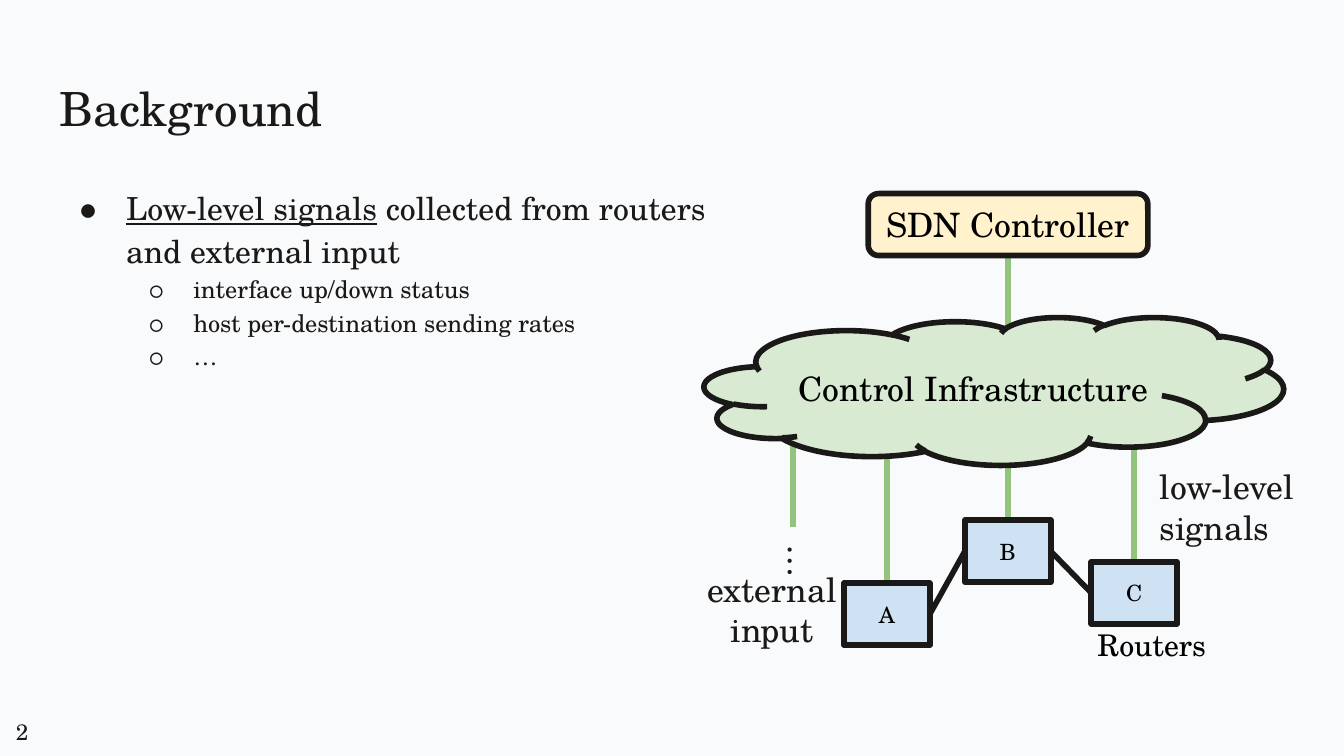
from dataclasses import dataclass

from lxml import etree
from pptx import Presentation
from pptx import util as u
from pptx.dml.color import RGBColor
from pptx.enum import shapes, text
from pptx.oxml import ns

Pt = u.Pt
SHAPE = shapes.MSO_SHAPE
LEFT, CENTER = text.PP_ALIGN.LEFT, text.PP_ALIGN.CENTER
TOP, MIDDLE = text.MSO_ANCHOR.TOP, text.MSO_ANCHOR.MIDDLE


@dataclass(frozen=True)
class Theme:
    font: str = "TeX Gyre Schola"
    page: str = "F9FAFB"
    ink: str = "1B1918"
    black: str = "000000"
    link: str = "93C47D"
    controller: str = "FFF2CC"
    cloud: str = "D9EAD3"
    router: str = "CFE2F3"
    title_size: float = 25.2
    label_size: float = 18
    caption_size: float = 16
    small_size: float = 12
    bullet_sizes: tuple = (17, 13)
    line_width: float = 3
    inset: float = 7.2


@dataclass(frozen=True)
class Box:
    left: float
    top: float
    width: float
    height: float

    def inner(self, left, top, width, height):
        return Box(self.left + left, self.top + top, width, height)

    def lengths(self):
        return [Pt(value) for value in (self.left, self.top, self.width, self.height)]


THEME = Theme()


def color(value):
    return RGBColor.from_string(value)


def format_span(span, size, ink):
    span.font.name = THEME.font
    span.font.size = Pt(size)
    span.font.color.rgb = color(ink)


def set_frame(frame, anchor=TOP):
    frame.word_wrap = True
    frame.auto_size = text.MSO_AUTO_SIZE.NONE
    frame.vertical_anchor = anchor
    frame.margin_left = frame.margin_right = Pt(THEME.inset)
    frame.margin_top = frame.margin_bottom = Pt(THEME.inset)


def write(frame, words, size, ink=THEME.ink, align=LEFT, anchor=TOP):
    set_frame(frame, anchor)
    para = frame.paragraphs[0]
    para.text = words
    para.alignment = align
    for span in para.runs:
        format_span(span, size, ink)


def add_label(page, box, words, size, ink=THEME.ink, align=CENTER):
    label = page.shapes.add_textbox(*box.lengths())
    write(label.text_frame, words, size, ink, align)
    return label


def add_node(page, kind, box, fill, words, size):
    node = page.shapes.add_shape(kind, *box.lengths())
    node.shadow.inherit = False
    node.fill.solid()
    node.fill.fore_color.rgb = color(fill)
    node.line.color.rgb = color(THEME.ink)
    node.line.width = Pt(THEME.line_width)
    write(node.text_frame, words, size, THEME.black, CENTER, MIDDLE)


def add_line(page, box, start, end, ink):
    ends = [Pt(value) for x, y in (start, end) for value in (box.left + x, box.top + y)]
    line = page.shapes.add_connector(shapes.MSO_CONNECTOR.STRAIGHT, *ends)
    line.line.color.rgb = color(ink)
    line.line.width = Pt(THEME.line_width)
    etree.SubElement(line._element.spPr, ns.qn("a:effectLst"))


def add_title(page, box, words):
    title = page.shapes.title
    title.left, title.top, title.width, title.height = box.lengths()
    write(title.text_frame, words, THEME.title_size)


def set_bullet(para, level):
    mark, margin, hang = (("●", 36, 26.6), ("○", 72, 24.5))[level]
    para.level = level
    props = para._p.get_or_add_pPr()
    props.set("marL", str(Pt(margin)))
    props.set("indent", str(-Pt(hang)))
    tint = etree.SubElement(props, ns.qn("a:buClr"))
    etree.SubElement(tint, ns.qn("a:srgbClr"), val=THEME.ink)
    etree.SubElement(props, ns.qn("a:buFont"), typeface=THEME.font)
    etree.SubElement(props, ns.qn("a:buChar"), char=mark)


def add_bullets(page, box, items):
    """Each item is a level, an underlined lead and the remaining words."""
    frame = page.shapes.add_textbox(*box.lengths()).text_frame
    set_frame(frame)
    for index, (level, lead, rest) in enumerate(items):
        para = frame.add_paragraph() if index else frame.paragraphs[0]
        para.line_spacing = 1.15
        set_bullet(para, level)
        for words, underlined in ((lead, True), (rest, False)):
            if words:
                span = para.add_run()
                span.text = words
                format_span(span, THEME.bullet_sizes[level], THEME.ink)
                span.font.underline = underlined


def add_network(page, box):
    # Routers: left, top, and where the link leaves the cloud
    wide, high = 46, 33.2
    routers = {"A": (84.2, 208.8, 116.6), "C": (216.7, 197.3, 100.8),
               "B": (149, 175, 129.6)}

    # Links that end behind the cloud
    for left, top, start in routers.values():
        middle = left + wide / 2
        add_line(page, box, (middle, start), (middle, top), THEME.link)
    add_line(page, box, (56.9, 129.6), (56.9, 178.5), THEME.link)
    add_line(page, box, (172, 33.2), (172, 90), THEME.link)

    # Links between neighbouring routers
    for near, far in ("AB", "BC"):
        (x1, y1, _), (x2, y2, _) = routers[near], routers[far]
        add_line(page, box, (x1 + wide, y1 + high / 2), (x2, y2 + high / 2), THEME.ink)

    # Nodes
    for name, (left, top, _) in routers.items():
        add_node(page, SHAPE.RECTANGLE, box.inner(left, top, wide, high),
                 THEME.router, name, THEME.small_size)
    add_node(page, SHAPE.CLOUD, box.inner(9.4, 66.2, 310.3, 79.2),
             THEME.cloud, "Control Infrastructure ", THEME.label_size)
    add_node(page, SHAPE.ROUNDED_RECTANGLE, box.inner(97.2, 0, 149.8, high),
             THEME.controller, "SDN Controller", THEME.label_size)

    # Labels
    add_label(page, box.inner(246.3, 138.9, 99.4, 58.3), "low-level \nsignals",
              THEME.label_size, align=LEFT)
    dots = add_label(page, box.inner(28.1, 174.2, 57.6, 45.4), "…", THEME.label_size)
    dots.rotation = 90
    add_label(page, box.inner(0, 193.7, 91.4, 62.6), "external\ninput", THEME.label_size)
    add_label(page, box.inner(211, 224.6, 76.3, 33.8), "Routers",
              THEME.caption_size, THEME.black)


def main():
    deck = Presentation()
    deck.slide_width, deck.slide_height = Pt(720), Pt(405)
    page = deck.slides.add_slide(deck.slide_layouts.get_by_name("Title Only"))
    page.background.fill.solid()
    page.background.fill.fore_color.rgb = color(THEME.page)

    add_title(page, Box(24.5, 35.3, 360, 45.4), "Background")
    add_bullets(page, Box(24.5, 90.7, 373, 113.8), [
        (0, "Low-level signals", " collected from routers and external input"),
        (1, "", "interface up/down status"),
        (1, "", "host per-destination sending rates"),
        (1, "", "…"),
    ])
    add_network(page, Box(367.9, 103.7, 345.7, 258.4))
    add_label(page, Box(1.4, 377.3, 36.7, 25.2), "2", THEME.small_size, align=LEFT)
    deck.save("out.pptx")


if __name__ == "__main__":
    main()
